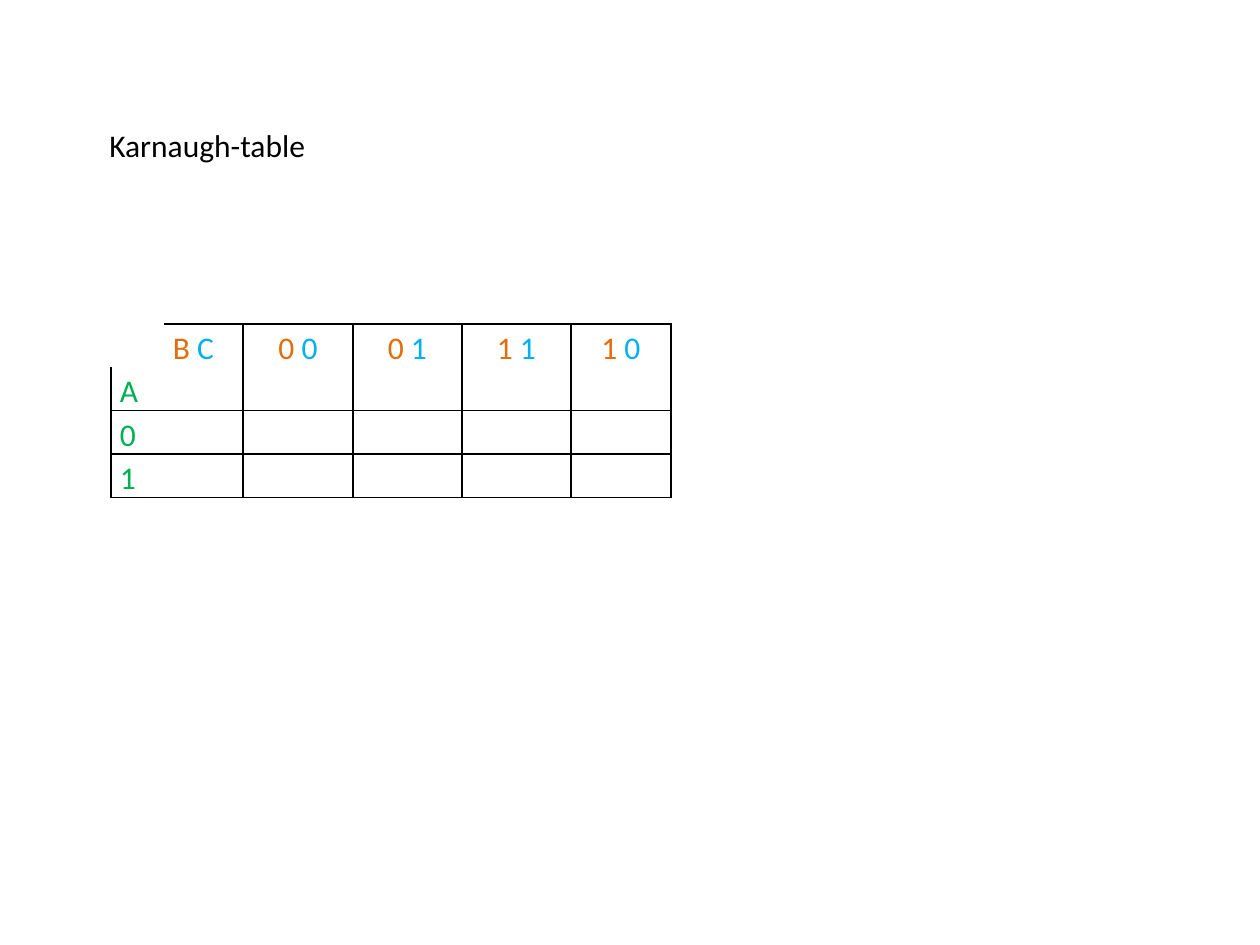
import pptx
import pptx.util
import pptx.dml.color
import pptx.enum.text
import pptx.oxml.ns
import lxml.etree

BLACK = pptx.dml.color.RGBColor(0, 0, 0)
ORANGE = pptx.dml.color.RGBColor(0xE4, 0x6C, 0x0A)
BLUE = pptx.dml.color.RGBColor(0x00, 0xB0, 0xF0)
GREEN = pptx.dml.color.RGBColor(0x00, 0xB0, 0x50)

SLIDE_SIZE = (1260, 945)
TITLE = "Karnaugh-table"
TITLE_BOX = (97, 120, 692, 89)
TABLE_CORNER = (111, 324)
COLUMN_WIDTHS = [53, 79, 110, 109, 109, 100, 104]
ROW_HEIGHTS = [43, 43, 43, 43, 87]
HEADERS = [("B ", "C"), ("0 ", "0"), ("0 ", "1"), ("1 ", "1"), ("1 ", "0")]
ROW_LABELS = ["A", "0", "1"]
EDGES = [
    ["", "TRB"] + ["LTRB"] * 4 + ["L"],
    ["LB", "RB"] + ["LRB"] * 4 + ["L"],
    ["LTRB", "TRB"] + ["LTRB"] * 4 + ["L"],
    ["LTRB", "TRB"] + ["LTRB"] * 4 + ["L"],
    ["T"] * 6 + [""],
]
MERGES = [((0, column), (1, column)) for column in range(1, 6)]
MERGES += [((row, 0), (row, 1)) for row in range(2, 5)]


def px(length):
    return pptx.util.Emu(length * 914400 // 126)


def set_font(paragraph):
    paragraph.font.name = "Calibri"
    paragraph.font.size = pptx.util.Pt(18)


def write(paragraph, parts):
    for text, color in parts:
        run = paragraph.add_run()
        run.text = text
        run.font.color.rgb = color


def draw_borders(cell, edges):
    properties = cell._tc.get_or_add_tcPr()
    for position, edge in enumerate("LRTB"):
        line = lxml.etree.Element(pptx.oxml.ns.qn("a:ln" + edge), w="12700")
        if edge in edges:
            fill = lxml.etree.SubElement(line, pptx.oxml.ns.qn("a:solidFill"))
            lxml.etree.SubElement(fill, pptx.oxml.ns.qn("a:srgbClr"), val=str(BLACK))
        else:
            lxml.etree.SubElement(line, pptx.oxml.ns.qn("a:noFill"))
        properties.insert(position, line)


def add_title(slide):
    text_frame = slide.shapes.add_textbox(*map(px, TITLE_BOX)).text_frame
    text_frame.word_wrap = True
    paragraph = text_frame.paragraphs[0]
    set_font(paragraph)
    write(paragraph, [(TITLE, BLACK)])


def add_karnaugh_table(slide):
    size = (sum(COLUMN_WIDTHS), sum(ROW_HEIGHTS))
    table = slide.shapes.add_table(
        len(ROW_HEIGHTS), len(COLUMN_WIDTHS), *map(px, TABLE_CORNER + size)
    ).table
    table.first_row = table.horz_banding = False
    for column, width in zip(table.columns, COLUMN_WIDTHS):
        column.width = px(width)
    for row, height in zip(table.rows, ROW_HEIGHTS):
        row.height = px(height)

    for row, row_edges in enumerate(EDGES):
        for column, edges in enumerate(row_edges):
            cell = table.cell(row, column)
            cell.margin_left = cell.margin_right = px(9)
            cell.margin_top = cell.margin_bottom = 0
            cell.fill.background()
            draw_borders(cell, edges)
            paragraph = cell.text_frame.paragraphs[0]
            paragraph.line_spacing = 1.15
            set_font(paragraph)

    for first, last in MERGES:
        table.cell(*first).merge(table.cell(*last))

    for column, (left, right) in enumerate(HEADERS, start=1):
        paragraph = table.cell(0, column).text_frame.paragraphs[0]
        write(paragraph, [(left, ORANGE), (right, BLUE)])
        if column > 1:
            paragraph.alignment = pptx.enum.text.PP_ALIGN.CENTER
    for row, label in enumerate(ROW_LABELS, start=1):
        write(table.cell(row, 0).text_frame.paragraphs[0], [(label, GREEN)])


def main():
    presentation = pptx.Presentation()
    presentation.slide_width, presentation.slide_height = map(px, SLIDE_SIZE)
    slide = presentation.slides.add_slide(presentation.slide_layouts[6])
    add_title(slide)
    add_karnaugh_table(slide)
    presentation.save("out.pptx")


if __name__ == "__main__":
    main()
